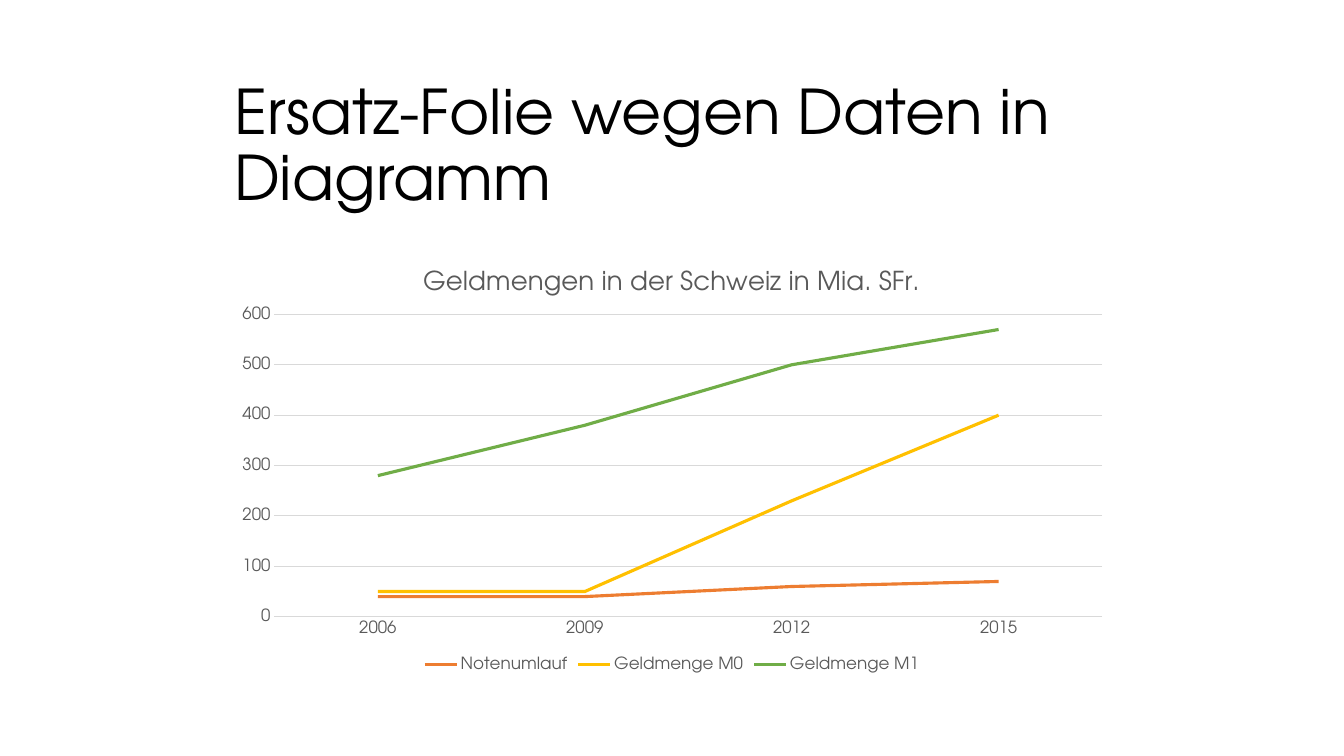
from lxml import etree
from pptx import Presentation
from pptx import util as u
from pptx.chart.data import CategoryChartData
from pptx.dml.color import RGBColor
from pptx.enum import chart as ch, text
from pptx.oxml import ns

BLACK = RGBColor(0x00, 0x00, 0x00)
GREY = RGBColor(0x59, 0x59, 0x59)
RULE = RGBColor(0xD9, 0xD9, 0xD9)
ORANGE = RGBColor(0xED, 0x7D, 0x31)
YELLOW = RGBColor(0xFF, 0xC0, 0x00)
GREEN = RGBColor(0x70, 0xAD, 0x47)

FACE = "TeX Gyre Adventor"
SLIDE_W, SLIDE_H = u.Inches(13.33), u.Inches(7.5)
COLUMN = SLIDE_W // 6

YEARS = ["2006", "2009", "2012", "2015"]
AGGREGATES = [
    ("Notenumlauf", [40, 40, 60, 70], ORANGE),
    ("Geldmenge M0", [50, 50, 230, 400], YELLOW),
    ("Geldmenge M1", [280, 380, 500, 570], GREEN),
]


def set_attributes(target, values):
    """Set every attribute named in a dict of format values."""
    for name, value in values.items():
        setattr(target, name, value)


def format_font(font, size, color):
    """Give a font the deck's face with a size and colour."""
    set_attributes(font, {"name": FACE, "size": u.Pt(size), "bold": False})
    font.color.rgb = color


def format_line(line, width, color):
    """Give a line a solid colour and a width in points."""
    line.color.rgb = color
    line.width = u.Pt(width)


def add_heading(slide, wording, box):
    """Place the slide title in the given box."""
    heading = slide.shapes.title
    set_attributes(heading, dict(zip(("left", "top", "width", "height"), box)))
    frame = heading.text_frame
    frame.text = wording
    set_attributes(frame, {"word_wrap": True, "auto_size": text.MSO_AUTO_SIZE.NONE,
                           "vertical_anchor": text.MSO_ANCHOR.MIDDLE})
    paragraph = frame.paragraphs[0]
    set_attributes(paragraph, {"alignment": text.PP_ALIGN.LEFT, "line_spacing": 0.9})
    format_font(paragraph.runs[0].font, 44, BLACK)


def format_axes(money):
    """Format the year axis and the amount axis of the chart."""
    years, amounts = money.category_axis, money.value_axis
    for axis in (years, amounts):
        set_attributes(axis, {"major_tick_mark": ch.XL_TICK_MARK.NONE,
                              "minor_tick_mark": ch.XL_TICK_MARK.NONE})
        format_font(axis.tick_labels.font, 12, GREY)
    format_line(years.format.line, 0.75, RULE)
    set_attributes(amounts, {"minimum_scale": 0, "maximum_scale": 600, "major_unit": 100,
                             "has_major_gridlines": True})
    amounts.format.line.fill.background()
    format_line(amounts.major_gridlines.format.line, 0.75, RULE)


def place_plot(money, box, inset):
    """Fix the inner plot area at an inset (left, top, width, height) of the chart box."""
    area = money.plots[0]._element.getparent()
    for layout in area.findall(ns.qn("c:layout")):
        area.remove(layout)
    layout = etree.Element(ns.qn("c:layout"))
    area.insert(0, layout)
    manual = etree.SubElement(layout, ns.qn("c:manualLayout"))
    _, _, width, height = box
    shares = [part / whole for part, whole in zip(inset, (width, height) * 2)]
    values = [("layoutTarget", "inner"), ("xMode", "edge"), ("yMode", "edge"),
              *zip("xywh", shares)]
    for tag, value in values:
        etree.SubElement(manual, ns.qn(f"c:{tag}"), val=str(value))


def add_money_chart(slide, wording, box):
    """Place the line chart of the money aggregates in the given box."""
    data = CategoryChartData(number_format="General")
    data.categories = YEARS
    for name, amounts, _ in AGGREGATES:
        data.add_series(name, amounts)
    money = slide.shapes.add_chart(ch.XL_CHART_TYPE.LINE, *box, data).chart
    format_font(money.font, 10, BLACK)
    set_attributes(money, {"has_title": True, "has_legend": True})
    caption = money.chart_title
    caption.include_in_layout = False
    caption.text_frame.text = wording
    format_font(caption.text_frame.paragraphs[0].runs[0].font, 18.6, GREY)
    set_attributes(money.legend, {"position": ch.XL_LEGEND_POSITION.BOTTOM,
                                  "include_in_layout": False})
    format_font(money.legend.font, 12, GREY)
    format_axes(money)
    place_plot(money, box, [u.Inches(part) for part in (0.5, 0.64, 8.21, 3)])
    plot = money.plots[0]
    plot.vary_by_categories = False
    for aggregate, (_, _, color) in zip(plot.series, AGGREGATES):
        aggregate.smooth = False
        aggregate.marker.style = ch.XL_MARKER_STYLE.NONE
        format_line(aggregate.format.line, 2.25, color)


def main():
    """Build the slide and save it."""
    deck = Presentation()
    set_attributes(deck, {"slide_width": SLIDE_W, "slide_height": SLIDE_H})
    slide = deck.slides.add_slide(deck.slide_layouts[5])
    add_heading(slide, "Ersatz-Folie wegen Daten in Diagramm",
                (COLUMN, u.Inches(0.74), u.Inches(11.5), u.Inches(1.45)))
    add_money_chart(slide, "Geldmengen in der Schweiz in Mia. SFr.",
                    (COLUMN, u.Inches(2.48), 4 * COLUMN, u.Inches(4.23)))
    deck.save("out.pptx")


if __name__ == "__main__":
    main()
